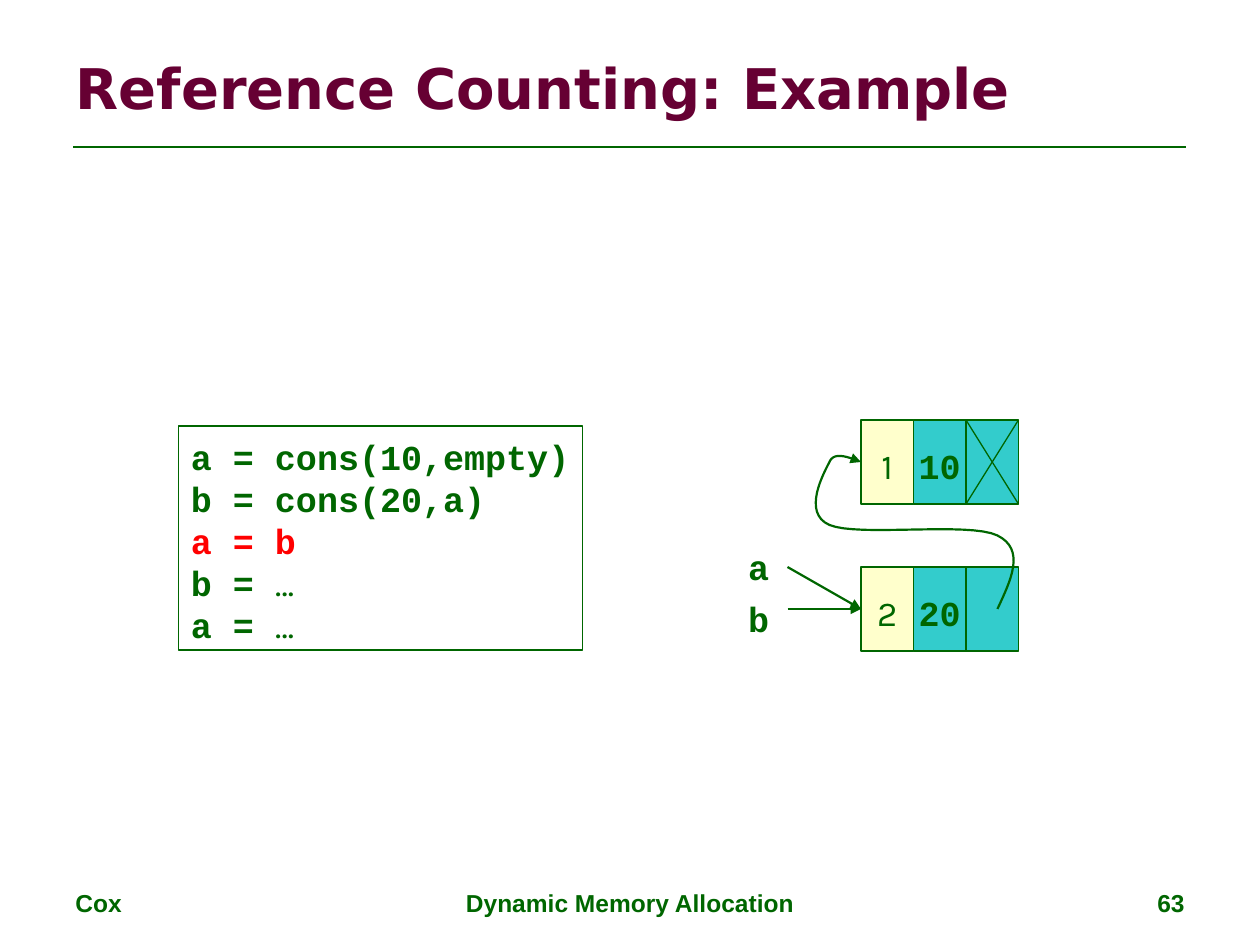
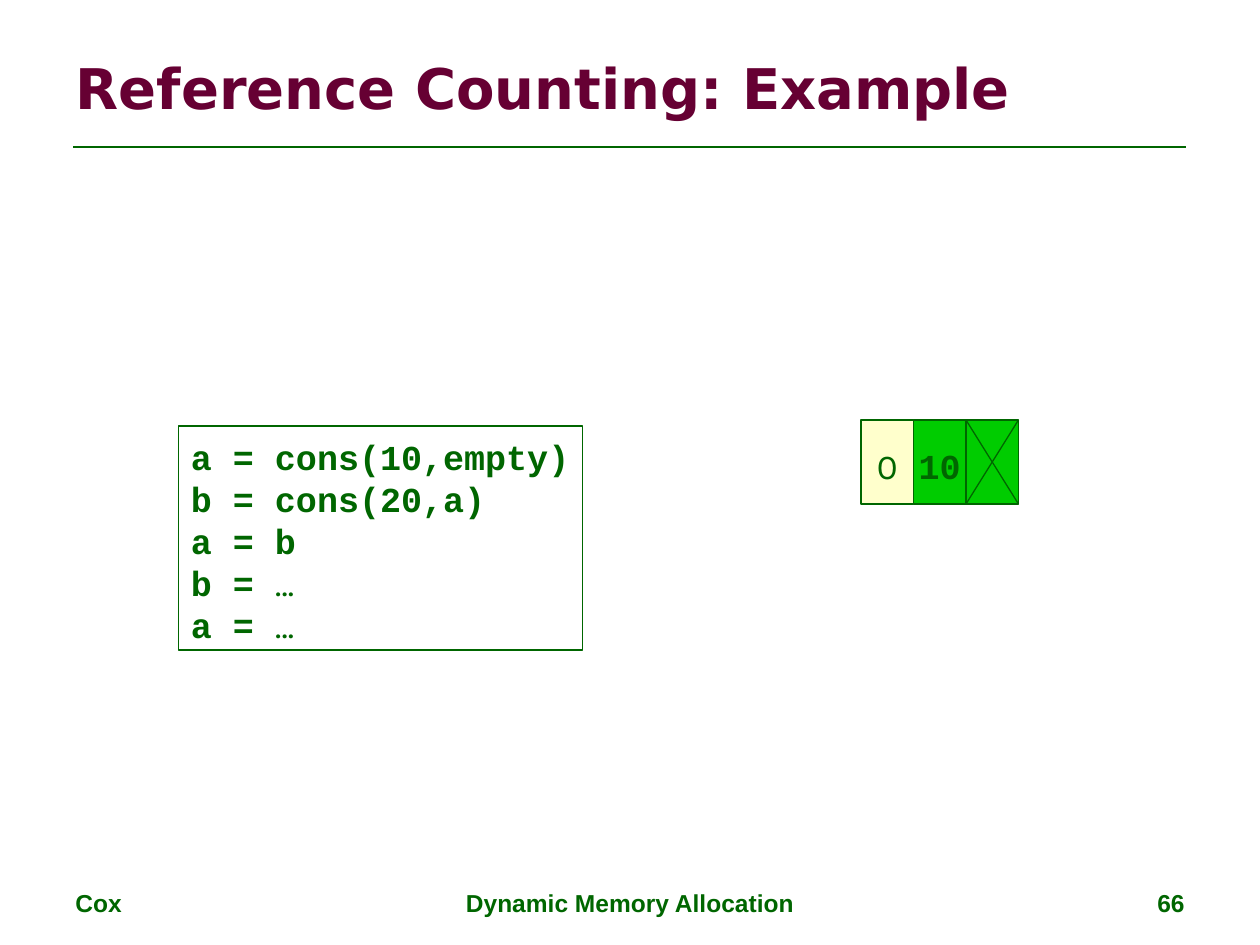
"""Builds two slides that trace reference counts through a short list program."""
from dataclasses import dataclass

from lxml.etree import SubElement
from pptx import Presentation
from pptx.dml.color import RGBColor
from pptx.enum.shapes import MSO_CONNECTOR as Connector, MSO_SHAPE as Preset
from pptx.enum.text import MSO_ANCHOR as Anchor, MSO_AUTO_SIZE as AutoSize, PP_ALIGN as Align
from pptx.oxml.ns import qn
from pptx.util import Pt


@dataclass(frozen=True)
class Theme:
    """Colours, fonts and sizes of the deck."""
    green: str = "006600"
    plum: str = "660033"
    red: str = "FF0000"
    cream: str = "FFFFCC"
    teal: str = "33CCCC"
    lime: str = "00CC00"
    title_font: str = "DejaVu Sans"
    footer_font: str = "Arial"
    code_font: str = "Courier New"
    plain_font: str = "Karla"
    title_size: float = 32
    body_size: float = 20
    footer_size: float = 14
    line_pitch: float = 24
    thin: float = 0.75
    arrow: float = 1.25
    rule: float = 1.5


THEME = Theme()
CODE = ["a = cons(10,empty)", "b = cons(20,a)", "a = b", "b = …", "a = …"]
CELL_LEFT, CELL_WIDTH, CELL_HEIGHT = 492, 30, 48
UPPER_TOP, LOWER_TOP = 240, 324
LABEL_LEFT, ARROW_LEFT = 420, 450
LINK_START = (570, 348)
LINK_CURVES = [
    ((578, 331), (586, 314), (570, 306)),
    ((553.5, 298), (490.5, 307), (474, 300)),
    ((458, 293), (471, 270), (474, 264)),
    ((476.5, 258), (484.5, 261), (492, 264)),
]


def trace_curves(start, curves, steps=16):
    """Return points along a chain of cubic curves."""
    points = [start]
    for first, second, end in curves:
        origin = points[-1]
        for step in range(1, steps + 1):
            t = step / steps
            u = 1 - t
            points.append(tuple(
                u ** 3 * p + 3 * u * u * t * q + 3 * u * t * t * r + t ** 3 * s
                for p, q, r, s in zip(origin, first, second, end)))
    return points


class Deck:
    """Holds the theme and the current slide."""

    def __init__(self, theme):
        """Start an empty presentation."""
        self.theme = theme
        self.presentation = Presentation()
        self.presentation.slide_width = Pt(720)
        self.presentation.slide_height = Pt(540)
        self.slide = None

    def add_slide(self, title, number):
        """Add a slide with its title, rule and footers."""
        theme = self.theme
        self.slide = self.presentation.slides.add_slide(self.presentation.slide_layouts[5])
        shape = self.slide.shapes.title
        shape.left, shape.top, shape.width, shape.height = Pt(36), Pt(21.6), Pt(648), Pt(56)
        frame = shape.text_frame
        frame.auto_size = AutoSize.NONE
        frame.vertical_anchor = Anchor.MIDDLE
        frame.paragraphs[0].alignment = Align.LEFT
        self.run(frame.paragraphs[0], title, theme.title_font, theme.title_size, theme.plum)
        self.line((42, 84), (678, 84), theme.rule)
        for left, width, alignment, text in [
                (36, 168, Align.LEFT, "Cox"),
                (246, 228, Align.CENTER, "Dynamic Memory Allocation"),
                (516, 168, Align.RIGHT, str(number))]:
            self.footer(left, width, alignment, text)

    def run(self, paragraph, text, font, size, color, bold=True):
        """Add one formatted run."""
        run = paragraph.add_run()
        run.text = text
        run.font.name, run.font.size, run.font.bold = font, Pt(size), bold
        run.font.color.rgb = RGBColor.from_string(color)

    def footer(self, left, width, alignment, text):
        """Add one footer text."""
        box = self.slide.shapes.add_textbox(Pt(left), Pt(504), Pt(width), Pt(25))
        box.text_frame.word_wrap = True
        paragraph = box.text_frame.paragraphs[0]
        paragraph.alignment = alignment
        self.run(paragraph, text, self.theme.footer_font, self.theme.footer_size, self.theme.green)

    def body_frame(self, shape):
        """Set the unwrapped body style on a shape and return its text frame."""
        frame = shape.text_frame
        frame.word_wrap = False
        frame.margin_top, frame.margin_bottom = Pt(5.6), Pt(1.6)
        return frame

    def body_line(self, paragraph, text, alignment=Align.CENTER, color=None, plain=False):
        """Fill a paragraph, with any ellipsis in the plain font."""
        theme = self.theme
        paragraph.alignment = alignment
        paragraph.line_spacing = Pt(theme.line_pitch)
        code, ellipsis, _ = text.partition("…")
        for part, is_plain in ((code, plain), (ellipsis, True)):
            if part:
                font = theme.plain_font if is_plain else theme.code_font
                self.run(paragraph, part, font, theme.body_size, color or theme.green, not is_plain)

    def outline(self, shape, weight):
        """Give a shape the green outline without a shadow."""
        shape.shadow.inherit = False
        shape.line.color.rgb = RGBColor.from_string(self.theme.green)
        shape.line.width = Pt(weight)

    def rectangle(self, left, top, width, height, fill=None):
        """Add an outlined rectangle."""
        shape = self.slide.shapes.add_shape(
            Preset.RECTANGLE, Pt(left), Pt(top), Pt(width), Pt(height))
        self.outline(shape, self.theme.thin)
        if fill:
            shape.fill.solid()
            shape.fill.fore_color.rgb = RGBColor.from_string(fill)
        else:
            shape.fill.background()
        return shape

    def code_box(self, lines, current=None):
        """Add the program, with the current line in red."""
        frame = self.body_frame(self.rectangle(102, 243.4, 231, 128))
        frame.auto_size = AutoSize.SHAPE_TO_FIT_TEXT
        frame.vertical_anchor = Anchor.TOP
        for index, text in enumerate(lines):
            paragraph = frame.add_paragraph() if index else frame.paragraphs[0]
            color = self.theme.red if index == current else None
            self.body_line(paragraph, text, Align.LEFT, color)

    def cons_cell(self, top, count, value, fill, is_last=False):
        """Add a count, a value and a link field, crossed out at the list end."""
        for index, text in enumerate((count, value, "")):
            left = CELL_LEFT + index * CELL_WIDTH
            color = fill if index else self.theme.cream
            shape = self.rectangle(left, top, CELL_WIDTH, CELL_HEIGHT, color)
            if text:
                frame = self.body_frame(shape)
                frame.vertical_anchor = Anchor.MIDDLE
                self.body_line(frame.paragraphs[0], text, plain=index == 0)
        if is_last:
            right, bottom = left + CELL_WIDTH, top + CELL_HEIGHT
            self.line((left, top), (right, bottom), self.theme.thin)
            self.line((right, top), (left, bottom), self.theme.thin)

    def label(self, top, text):
        """Add a variable name."""
        box = self.slide.shapes.add_textbox(Pt(LABEL_LEFT), Pt(top), Pt(27), Pt(31))
        frame = self.body_frame(box)
        frame.auto_size = AutoSize.SHAPE_TO_FIT_TEXT
        self.body_line(frame.paragraphs[0], text)

    def arrowhead(self, shape):
        """End a line with a triangle."""
        SubElement(shape.element.spPr.find(qn("a:ln")), qn("a:tailEnd"), type="triangle")

    def line(self, start, end, weight):
        """Add a straight line."""
        connector = self.slide.shapes.add_connector(
            Connector.STRAIGHT, *(Pt(length) for length in start + end))
        connector.line.color.rgb = RGBColor.from_string(self.theme.green)
        connector.line.width = Pt(weight)
        SubElement(connector.element.spPr, qn("a:effectLst"))
        return connector

    def arrow(self, start, end):
        """Add a straight arrow."""
        self.arrowhead(self.line(start, end, self.theme.arrow))

    def curved_arrow(self, start, curves):
        """Add an arrow along a chain of curves."""
        first, *rest = [(Pt(x), Pt(y)) for x, y in trace_curves(start, curves)]
        builder = self.slide.shapes.build_freeform(*first)
        builder.add_line_segments(rest, close=False)
        shape = builder.convert_to_shape()
        shape.fill.background()
        self.outline(shape, self.theme.arrow)
        self.arrowhead(shape)


def main():
    """Build and save both slides."""
    deck = Deck(THEME)
    title = "Reference Counting: Example"
    target = (CELL_LEFT, LOWER_TOP + CELL_HEIGHT / 2)

    deck.add_slide(title, 63)
    deck.code_box(CODE, current=2)
    deck.cons_cell(UPPER_TOP, "1", "10", THEME.teal, is_last=True)
    deck.label(306, "a")
    deck.label(336, "b")
    deck.arrow((ARROW_LEFT, target[1]), target)
    deck.cons_cell(LOWER_TOP, "2", "20", THEME.teal)
    deck.curved_arrow(LINK_START, LINK_CURVES)
    deck.arrow((ARROW_LEFT, LOWER_TOP), target)

    deck.add_slide(title, 66)
    deck.code_box(CODE)
    deck.cons_cell(UPPER_TOP, "0", "10", THEME.lime, is_last=True)

    deck.presentation.save("out.pptx")


if __name__ == "__main__":
    main()
